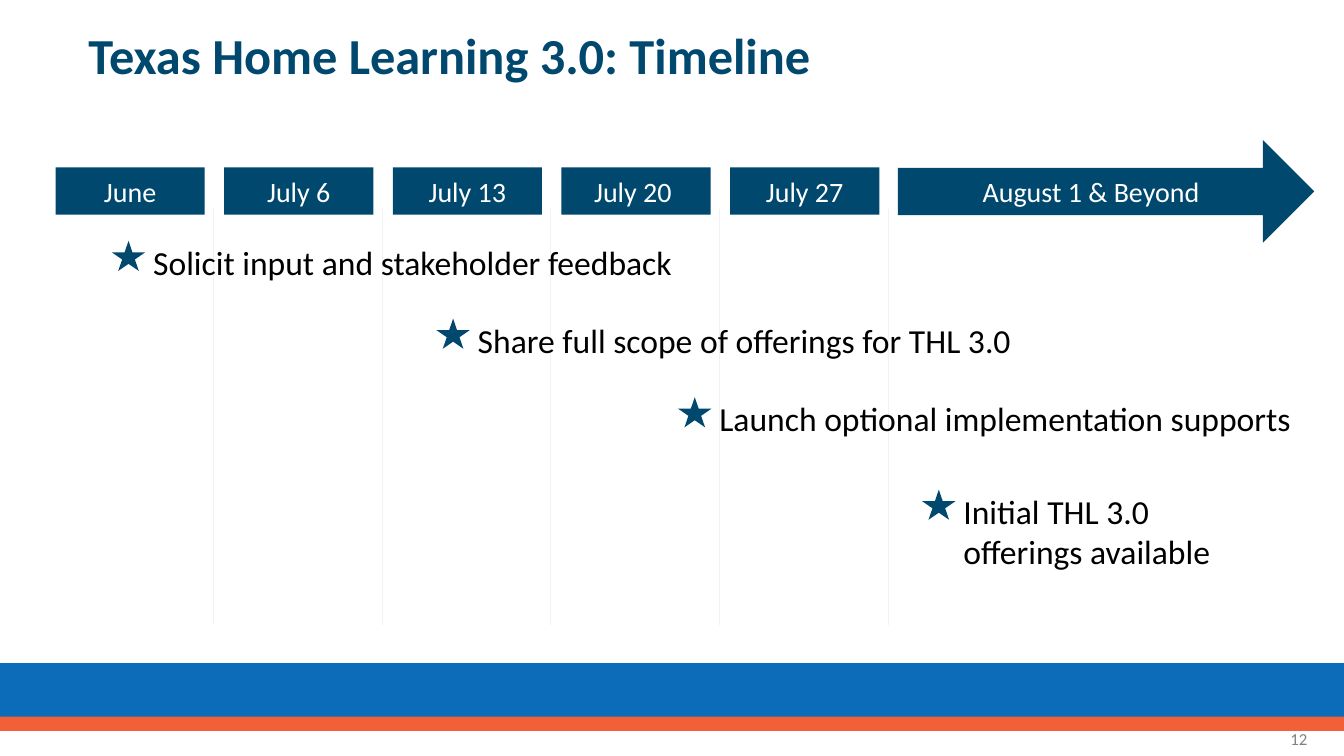
"""Build the Texas Home Learning 3.0 timeline slide."""
from typing import Any, NamedTuple

from lxml import etree
from pptx import Presentation
from pptx import util as u
from pptx.dml.color import RGBColor
from pptx.enum import shapes, text
from pptx.oxml import ns

COLORS = {
    "navy": "00486E",
    "blue": "0D6CB9",
    "orange": "F16038",
    "rule": "F2F2F2",
    "white": "FFFFFF",
    "black": "000000",
    "gray": "808080",
}
SHAPE, ALIGN, ANCHOR = shapes.MSO_SHAPE, text.PP_ALIGN, text.MSO_ANCHOR
PERIOD_PITCH = 4.25


class Box(NamedTuple):
    left: float
    top: float
    width: float
    height: float

    def lengths(self) -> list[u.Length]:
        return [u.Cm(value) for value in self]


class Style(NamedTuple):
    size: int
    color: str
    bold: bool = False
    align: Any = ALIGN.LEFT
    anchor: Any = ANCHOR.TOP
    wrap: bool = True
    spacing: float = 1.0


class Milestone(NamedTuple):
    wording: str
    left: float
    top: float
    width: float = 15.8
    height: float = 1.27


TITLE = Style(36, "navy", bold=True, anchor=ANCHOR.MIDDLE, spacing=0.9)
PERIOD = Style(20, "white", align=ALIGN.CENTER, anchor=ANCHOR.MIDDLE)
BEYOND = PERIOD._replace(wrap=False)
EVENT = Style(24, "black")
PAGE = Style(12, "gray", align=ALIGN.RIGHT, anchor=ANCHOR.MIDDLE)

PERIODS = ["June", "July 6", "July 13", "July 20 ", "July 27"]
MILESTONES = [
    Milestone("Solicit input and stakeholder feedback", 2.82, 6.07),
    Milestone("Share full scope of offerings for THL 3.0", 11, 8.03),
    Milestone("Launch optional implementation supports", 17.09, 10.01),
    Milestone("Initial THL 3.0 offerings available", 23.24, 12.34, 7.62, 2.31),
]


def rgb(name: str) -> RGBColor:
    return RGBColor.from_string(COLORS[name])


def apply(target: Any, values: dict[str, Any]) -> None:
    for attribute, value in values.items():
        setattr(target, attribute, value)


def write(holder: Any, wording: str, style: Style) -> None:
    frame = holder.text_frame
    apply(frame, {"word_wrap": style.wrap, "vertical_anchor": style.anchor})
    paragraph = frame.paragraphs[0]
    apply(paragraph, {"alignment": style.align, "line_spacing": style.spacing})
    run = paragraph.add_run()
    run.text = wording
    apply(run.font, {"name": "Calibri", "size": u.Pt(style.size), "bold": style.bold})
    run.font.color.rgb = rgb(style.color)


def add_label(slide: Any, box: Box, wording: str, style: Style) -> None:
    write(slide.shapes.add_textbox(*box.lengths()), wording, style)


def add_block(slide: Any, kind: Any, box: Box, color: str) -> Any:
    block = slide.shapes.add_shape(kind, *box.lengths())
    block.shadow.inherit = False
    block.fill.solid()
    block.fill.fore_color.rgb = rgb(color)
    block.line.fill.background()
    return block


def add_divider(slide: Any, x: float, top: float, bottom: float) -> None:
    divider = slide.shapes.add_connector(
        shapes.MSO_CONNECTOR.STRAIGHT, u.Cm(x), u.Cm(top), u.Cm(x), u.Cm(bottom)
    )
    divider.line.color.rgb = rgb("rule")
    divider.line.width = u.Pt(0.5)
    etree.SubElement(divider._element.spPr, ns.qn("a:effectLst"))


def add_milestone(slide: Any, event: Milestone) -> None:
    add_block(slide, SHAPE.STAR_5_POINT, Box(event.left, event.top, 0.84, 0.76), "navy")
    wording_box = Box(event.left + 0.79, event.top - 0.1, event.width, event.height)
    add_label(slide, wording_box, event.wording, EVENT)


def main() -> None:
    deck = Presentation()
    apply(deck, {"slide_width": u.Cm(33.87), "slide_height": u.Cm(19.05)})
    slide = deck.slides.add_slide(deck.slide_layouts[6])

    add_block(slide, SHAPE.RECTANGLE, Box(0, 16.71, 33.87, 1.47), "blue")
    add_block(slide, SHAPE.RECTANGLE, Box(0, 18.06, 33.87, 0.36), "orange")
    add_label(slide, Box(1.98, 0.43, 30.89, 2.08), "Texas Home Learning 3.0: Timeline", TITLE)

    for index, period in enumerate(PERIODS):
        offset = index * PERIOD_PITCH
        bar = add_block(slide, SHAPE.RECTANGLE, Box(1.4 + offset, 4.22, 3.76, 1.19), "navy")
        write(bar, period, PERIOD)
        add_divider(slide, 5.38 + offset, 5.26, 15.75)

    beyond = add_block(slide, SHAPE.RIGHT_ARROW, Box(22.63, 3.53, 10.49, 2.59), "navy")
    beyond.adjustments[0] = 0.46
    write(beyond, "August 1 & Beyond ", BEYOND)

    for event in MILESTONES:
        add_milestone(slide, event)

    add_label(slide, Box(25.58, 18.19, 7.62, 0.86), "12", PAGE)
    deck.save("out.pptx")


if __name__ == "__main__":
    main()
